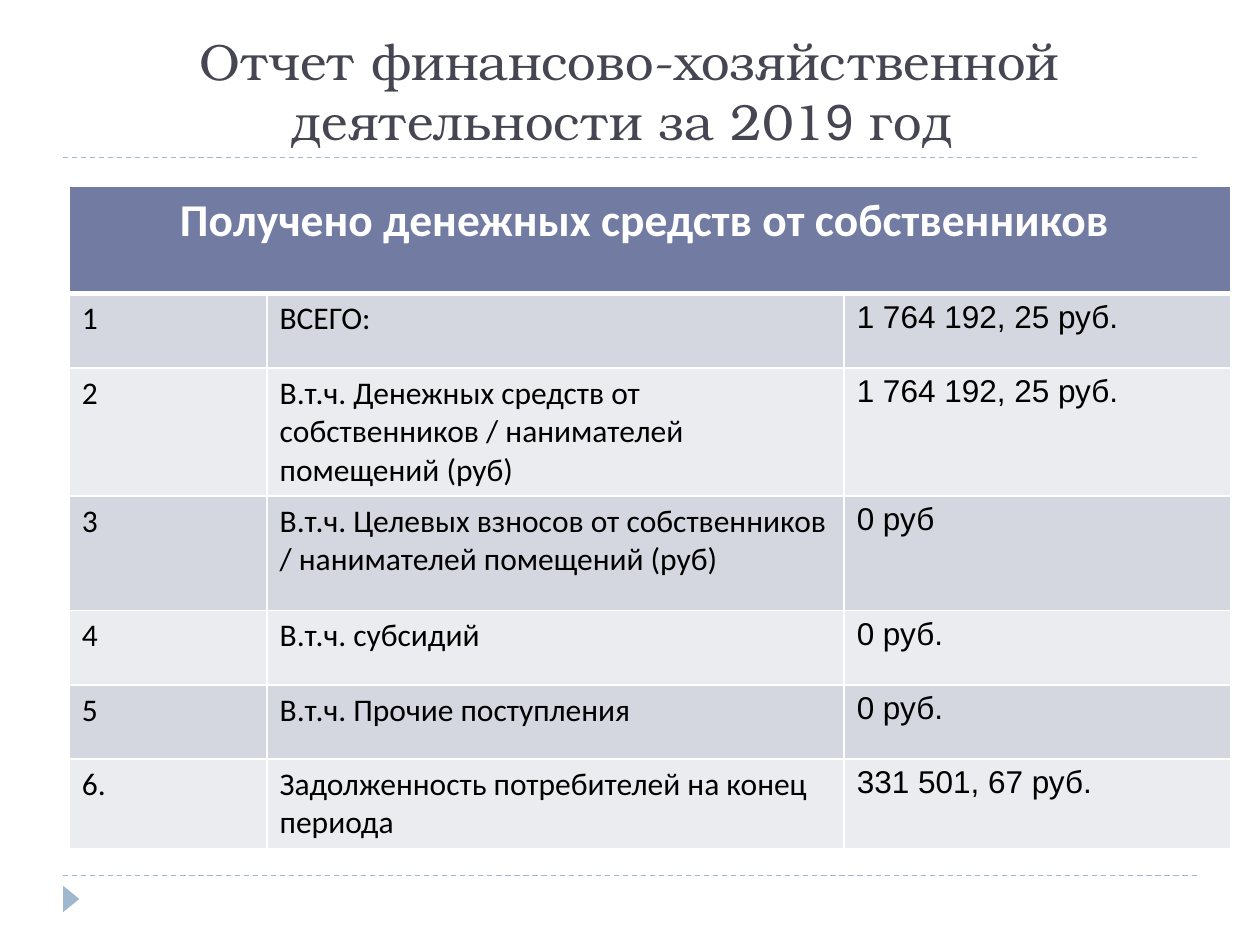
from dataclasses import dataclass

from lxml.etree import SubElement
from pptx import Presentation
from pptx.dml.color import RGBColor
from pptx.enum.dml import MSO_LINE
from pptx.enum.shapes import MSO_CONNECTOR, MSO_SHAPE
from pptx.enum.text import MSO_ANCHOR, MSO_AUTO_SIZE, PP_ALIGN
from pptx.oxml.ns import qn
from pptx.util import Inches, Pt


@dataclass(frozen=True)
class Theme:
    title: str = "464653"
    accent: str = "9FB8CD"
    header: str = "727CA3"
    bands: tuple = ("D5D7E0", "EBECF0")
    white: str = "FFFFFF"
    black: str = "000000"
    title_font: str = "TeX Gyre Bonum"
    body_font: str = "Calibri"
    value_font: str = "Arial"
    title_size: int = 29
    header_size: int = 26
    body_size: int = 18


THEME = Theme()

TITLE_RUNS = [
    ("Отчет финансово-хозяйственной деятельности за 201", THEME.title_font),
    ("9", THEME.value_font),
    (" год ", THEME.title_font),
]
HEADER = "Получено денежных средств от собственников "
ROWS = [
    ("1", "ВСЕГО:", "1 764 192, 25 руб."),
    ("2", "В.т.ч. Денежных средств от собственников / нанимателей помещений (руб)",
     "1 764 192, 25 руб."),
    ("3", "В.т.ч. Целевых взносов от собственников / нанимателей помещений (руб)",
     "0 руб"),
    ("4", "В.т.ч. субсидий", "0 руб."),
    ("5", "В.т.ч. Прочие поступления", "0 руб."),
    ("6.", "Задолженность потребителей на конец периода", "331 501, 67 руб."),
]
COL_WIDTHS = (1.57, 4.58, 3.07)
ROW_HEIGHTS = (0.85, 0.59, 0.91, 0.91, 0.59, 0.59, 0.64)


def add_run(p, text, font, size, color, bold=False):
    r = p.add_run()
    r.text = text
    r.font.name = font
    r.font.size = Pt(size)
    r.font.bold = bold
    r.font.color.rgb = RGBColor.from_string(color)


def add_title(s, left, top, width, height):
    sp = s.shapes.title
    sp.left, sp.top = Inches(left), Inches(top)
    sp.width, sp.height = Inches(width), Inches(height)
    tf = sp.text_frame
    tf.word_wrap = True
    tf.auto_size = MSO_AUTO_SIZE.NONE
    tf.vertical_anchor = MSO_ANCHOR.BOTTOM
    p = tf.paragraphs[0]
    p.alignment = PP_ALIGN.CENTER
    for text, font in TITLE_RUNS:
        add_run(p, text, font, THEME.title_size, THEME.title)


def add_rule(s, left, top, width):
    line = s.shapes.add_connector(
        MSO_CONNECTOR.STRAIGHT,
        Inches(left), Inches(top), Inches(left + width), Inches(top))
    line.line.color.rgb = RGBColor.from_string(THEME.accent)
    line.line.width = Pt(0.75)
    line.line.dash_style = MSO_LINE.DASH
    SubElement(line._element.spPr, qn("a:effectLst"))


def add_marker(s, left, top, width, height):
    sp = s.shapes.add_shape(MSO_SHAPE.ISOSCELES_TRIANGLE, Inches(left),
                            Inches(top), Inches(width), Inches(height))
    sp.rotation = 90
    sp.shadow.inherit = False
    sp.fill.solid()
    sp.fill.fore_color.rgb = RGBColor.from_string(THEME.accent)
    sp.line.fill.background()


def style_cell(cell, fill, top=1, bottom=1):
    # Borders come before the fill in the cell properties
    tcPr = cell._tc.get_or_add_tcPr()
    for tag, width in (("lnL", 1), ("lnR", 1), ("lnT", top), ("lnB", bottom)):
        ln = SubElement(tcPr, qn(f"a:{tag}"), w=str(Pt(width)))
        solid = SubElement(ln, qn("a:solidFill"))
        SubElement(solid, qn("a:srgbClr"), val=THEME.white)
    cell.fill.solid()
    cell.fill.fore_color.rgb = RGBColor.from_string(fill)


def add_report_table(s, left, top):
    table = s.shapes.add_table(
        len(ROW_HEIGHTS), len(COL_WIDTHS), Inches(left), Inches(top),
        Inches(sum(COL_WIDTHS)), Inches(sum(ROW_HEIGHTS))).table
    table.horz_banding = False
    for col, width in zip(table.columns, COL_WIDTHS):
        col.width = Inches(width)
    for row, height in zip(table.rows, ROW_HEIGHTS):
        row.height = Inches(height)

    # Header across all columns
    for cell in table.rows[0].cells:
        style_cell(cell, THEME.header, bottom=3)
    head = table.cell(0, 0)
    head.merge(table.cell(0, len(COL_WIDTHS) - 1))
    p = head.text_frame.paragraphs[0]
    p.alignment = PP_ALIGN.CENTER
    add_run(p, HEADER, THEME.body_font, THEME.header_size, THEME.white, True)

    # Banded body rows
    fonts = (THEME.body_font, THEME.body_font, THEME.value_font)
    for i, texts in enumerate(ROWS):
        for j, (text, font) in enumerate(zip(texts, fonts)):
            cell = table.cell(i + 1, j)
            style_cell(cell, THEME.bands[i % 2], top=1 if i else 3)
            add_run(cell.text_frame.paragraphs[0], text, font,
                    THEME.body_size, THEME.black)


def main():
    prs = Presentation()
    prs.slide_width, prs.slide_height = Inches(10), Inches(7.5)
    s = prs.slides.add_slide(prs.slide_layouts[5])
    # Frame
    for top in (6.95, 1.25):
        add_rule(s, 0.5, top, 9)
    add_marker(s, 0.46, 7.07, 0.21, 0.13)
    # Content
    add_title(s, 0.5, 0.25, 9, 1)
    add_report_table(s, 0.55, 1.48)
    prs.save("out.pptx")


if __name__ == "__main__":
    main()
